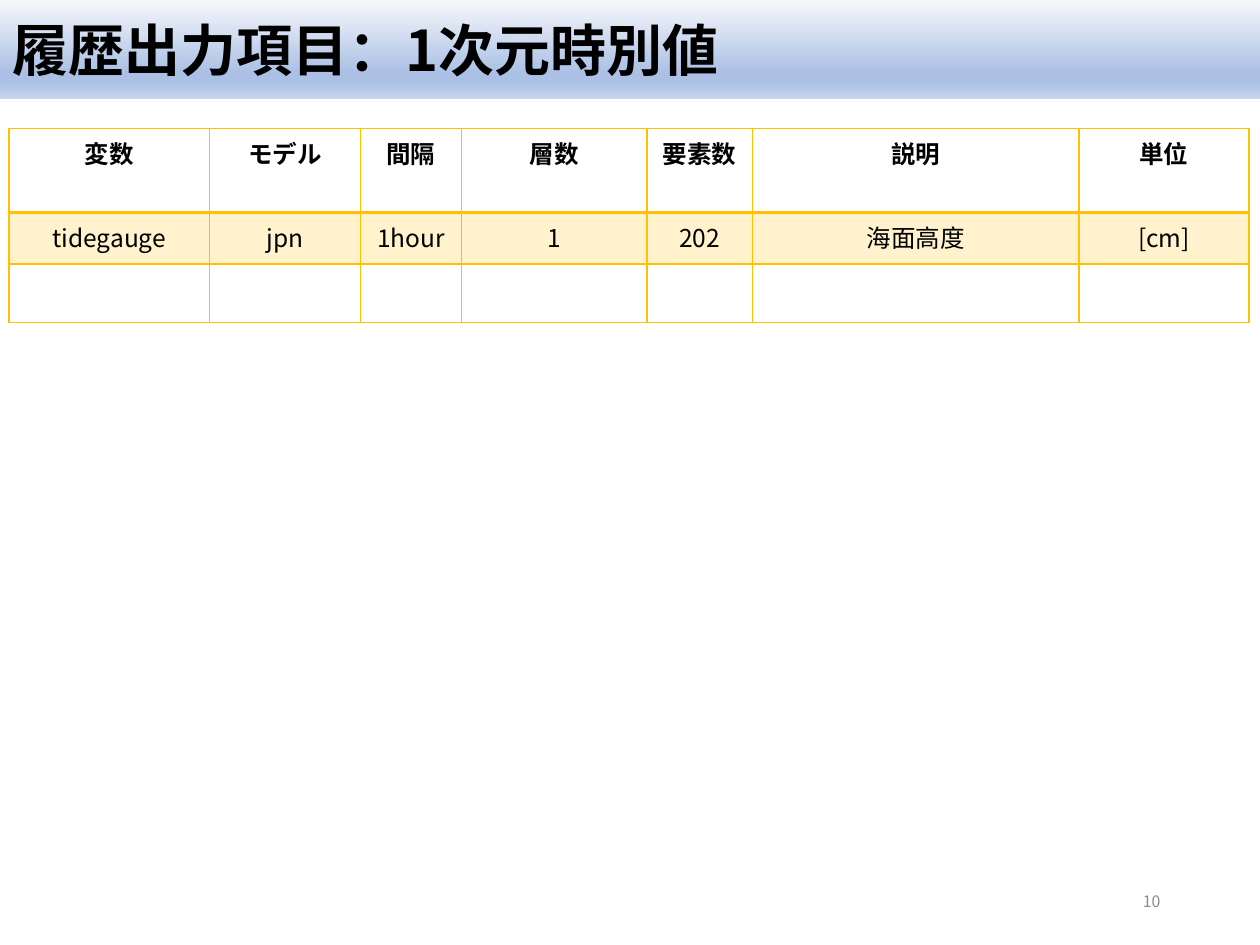
from lxml.etree import SubElement
from pptx import Presentation
from pptx.dml.color import RGBColor
from pptx.enum.text import MSO_ANCHOR, PP_ALIGN
from pptx.oxml import parse_xml
from pptx.oxml.ns import nsdecls, qn
from pptx.util import Cm, Pt

# Content
TITLE = "履歴出力項目：1次元時別値"
PAGE_NUMBER = "10"
HEADERS = ["変数", "モデル", "間隔", "層数", "要素数", "説明", "単位"]
TIDE_GAUGE = ["tidegauge", "jpn", "1hour", "1", "202", "海面高度", "[cm]"]
ROWS = [HEADERS, TIDE_GAUGE, [""] * len(HEADERS)]
COLUMN_WIDTHS = [4.04, 3.05, 2.03, 3.74, 2.13, 6.58, 3.43]  # cm
ROW_HEIGHTS = [1.7, 1.03, 1.18]  # cm

THEME = {
    "font": "Noto Sans CJK JP",
    "text": "000000",
    "muted": "8C8C8C",
    "accent": "FFC000",
    "row_opacity": 20,
    "banner": [(0, "F6F8FC"), (74, "ABC0E4"), (83, "ABC0E4"), (100, "C7D5ED")],
    "title_size": 32,
    "table_size": 14,
    "page_size": 9,
    "line": 1,
    "header_line": 2,
}


def write(frame, text, size, align, color=THEME["text"], bold=False):
    frame.text = text
    paragraph = frame.paragraphs[0]
    paragraph.alignment = align
    for run in paragraph.runs:
        run.font.size = Pt(size)
        run.font.bold = bold
        run.font.color.rgb = RGBColor.from_string(color)
        run.font.name = THEME["font"]
        east_asian = SubElement(run._r.get_or_add_rPr(), qn("a:ea"))
        east_asian.set("typeface", THEME["font"])


def fill_gradient(shape, stops):
    stop_xml = "".join(
        f'<a:gs pos="{position * 1000}"><a:srgbClr val="{color}"/></a:gs>'
        for position, color in stops
    )
    gradient = parse_xml(
        f'<a:gradFill {nsdecls("a")} rotWithShape="1"><a:gsLst>{stop_xml}</a:gsLst>'
        '<a:lin ang="5400000" scaled="0"/></a:gradFill>'
    )
    shape.fill.background()
    no_fill = shape._element.spPr.find(qn("a:noFill"))
    no_fill.getparent().replace(no_fill, gradient)


def add_borders(cell, widths):
    for side, width in widths.items():
        cell._tc.get_or_add_tcPr().append(parse_xml(
            f'<a:ln{side} {nsdecls("a")} w="{Pt(width)}"><a:solidFill>'
            f'<a:srgbClr val="{THEME["accent"]}"/></a:solidFill></a:ln{side}>'
        ))


def fill_accent(cell, opacity):
    cell.fill.solid()
    cell.fill.fore_color.rgb = RGBColor.from_string(THEME["accent"])
    color = cell._tc.tcPr.find(f'{qn("a:solidFill")}/{qn("a:srgbClr")}')
    SubElement(color, qn("a:alpha")).set("val", str(opacity * 1000))


def main():
    prs = Presentation()
    prs.slide_width, prs.slide_height = Cm(25.4), Cm(19.05)
    slide = prs.slides.add_slide(prs.slide_layouts[5])

    # Title banner
    title = slide.shapes.title
    title.left, title.top = Cm(0), Cm(0)
    title.width, title.height = prs.slide_width, Cm(2)
    fill_gradient(title, THEME["banner"])
    title.text_frame.vertical_anchor = MSO_ANCHOR.MIDDLE
    write(title.text_frame, TITLE, THEME["title_size"], PP_ALIGN.LEFT, bold=True)

    # Output item table
    table = slide.shapes.add_table(
        len(ROWS), len(HEADERS), Cm(0.18), Cm(2.59),
        Cm(sum(COLUMN_WIDTHS)), Cm(sum(ROW_HEIGHTS)),
    ).table
    table.first_row = table.horz_banding = False
    for column, width in zip(table.columns, COLUMN_WIDTHS):
        column.width = Cm(width)
    for row, height in zip(table.rows, ROW_HEIGHTS):
        row.height = Cm(height)

    line, header_line = THEME["line"], THEME["header_line"]
    for r, values in enumerate(ROWS):
        for c, value in enumerate(values):
            cell = table.cell(r, c)
            write(cell.text_frame, value, THEME["table_size"], PP_ALIGN.CENTER,
                  bold=r == 0)
            add_borders(cell, {
                "L": line,
                "R": line,
                "T": header_line if r == 1 else line,
                "B": header_line if r == 0 else line,
            })
            if values is TIDE_GAUGE:
                fill_accent(cell, THEME["row_opacity"])
            else:
                cell.fill.background()

    # Page number
    page = slide.shapes.add_textbox(Cm(16.81), Cm(17.65), Cm(6.83), Cm(1.02))
    page.text_frame.word_wrap = True
    page.text_frame.vertical_anchor = MSO_ANCHOR.MIDDLE
    write(page.text_frame, PAGE_NUMBER, THEME["page_size"], PP_ALIGN.RIGHT,
          THEME["muted"])

    prs.save("out.pptx")


if __name__ == "__main__":
    main()
